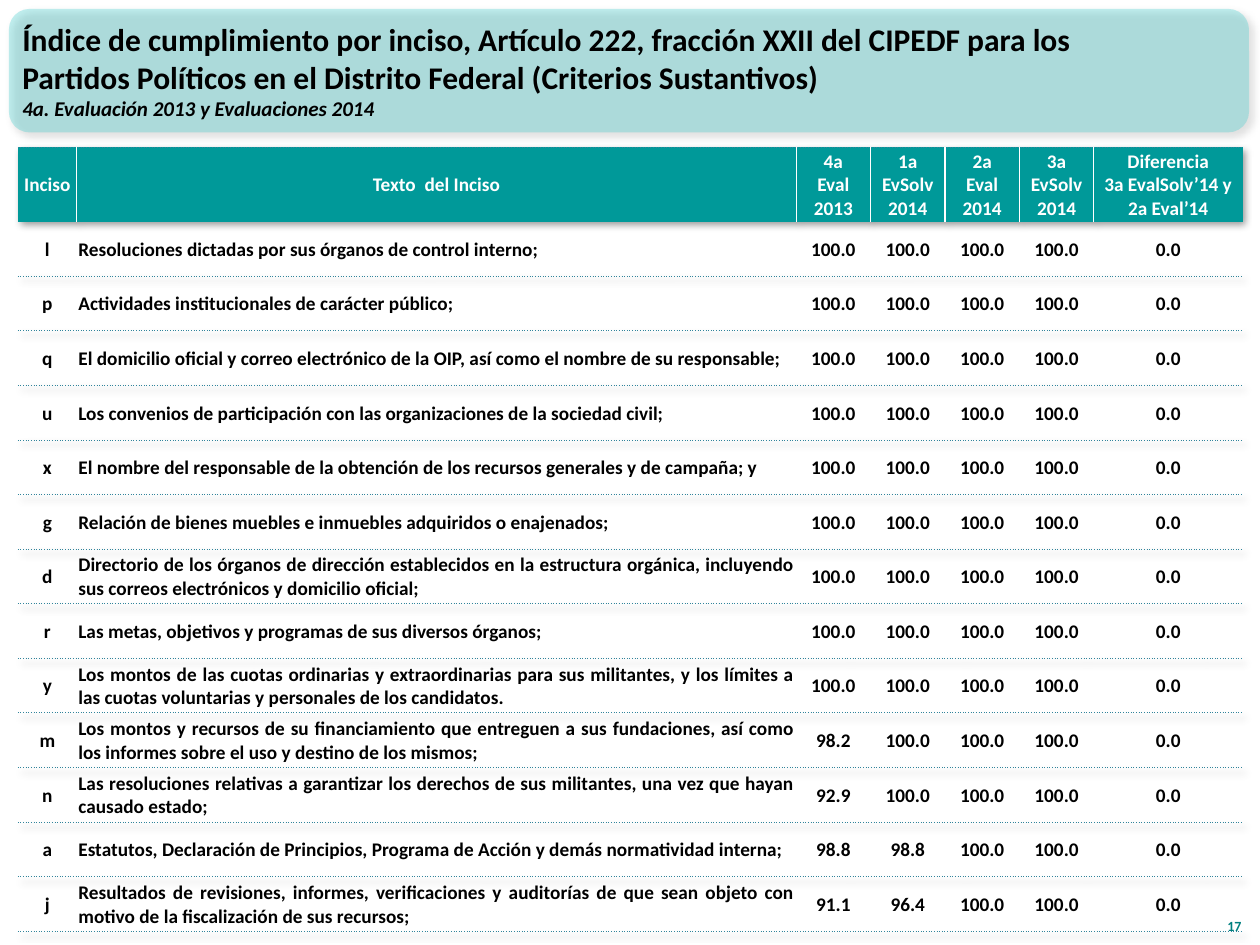
"""Build the compliance index slide for political parties in the Distrito Federal."""
from dataclasses import dataclass

from lxml import etree
from pptx import Presentation
from pptx.dml.color import RGBColor
from pptx.enum.shapes import MSO_SHAPE
from pptx.enum.text import MSO_ANCHOR, PP_ALIGN
from pptx.oxml.ns import qn
from pptx.util import Cm, Pt

ROUNDED = MSO_SHAPE.ROUNDED_RECTANGLE
MIDDLE, BOTTOM = MSO_ANCHOR.MIDDLE, MSO_ANCHOR.BOTTOM
LEFT, CENTER = PP_ALIGN.LEFT, PP_ALIGN.CENTER
RIGHT, JUSTIFY = PP_ALIGN.RIGHT, PP_ALIGN.JUSTIFY
PLAIN_STYLE = "{2D5ABB26-0587-4C30-8999-92F81FD0307C}"


@dataclass(frozen=True)
class Theme:
    font: str = "Calibri"
    ink: str = "000000"
    white: str = "FFFFFF"
    banner: str = "33CCCC"
    header: str = "009999"
    rule: str = "31849B"
    page: str = "008080"
    title_size: float = 18
    subtitle_size: float = 12
    table_size: float = 11
    page_size: float = 8


THEME = Theme()

TITLE = ("Índice de cumplimiento por inciso, Artículo 222, fracción XXII del CIPEDF para los "
         "Partidos Políticos en el Distrito Federal (Criterios Sustantivos)")
SUBTITLE = "4a. Evaluación 2013 y Evaluaciones 2014"

HEADINGS = [
    "Inciso",
    "Texto  del Inciso",
    "4a\nEval\n2013",
    "1a\nEvSolv\n2014",
    "2a\nEval\n2014",
    "3a\nEvSolv\n2014",
    "Diferencia\n3a EvalSolv’14 y\n2a Eval’14",
]
COLUMN_WIDTHS = [1.19, 14.5, 1.5, 1.5, 1.5, 1.5, 3]
HEADER_HEIGHT, ROW_HEIGHT = 1.5, 1.1

INCISOS = [
    ("l", "Resoluciones dictadas por sus órganos de control interno;", 100, 100, 100, 100),
    ("p", "Actividades institucionales de carácter público;", 100, 100, 100, 100),
    ("q", "El domicilio oficial y correo electrónico de la OIP, así como el nombre de su "
          "responsable;", 100, 100, 100, 100),
    ("u", "Los convenios de participación con las organizaciones de la sociedad civil;",
     100, 100, 100, 100),
    ("x", "El nombre del responsable de la obtención de los recursos generales y de campaña; y",
     100, 100, 100, 100),
    ("g", "Relación de bienes muebles e inmuebles adquiridos o enajenados;", 100, 100, 100, 100),
    ("d", "Directorio de los órganos de dirección establecidos en la estructura orgánica, "
          "incluyendo sus correos electrónicos y domicilio oficial;", 100, 100, 100, 100),
    ("r", "Las metas, objetivos y programas de sus diversos órganos;", 100, 100, 100, 100),
    ("y", "Los montos de las cuotas ordinarias y extraordinarias para sus militantes, y los "
          "límites a las cuotas voluntarias y personales de los candidatos.", 100, 100, 100, 100),
    ("m", "Los montos y recursos de su financiamiento que entreguen a sus fundaciones, así como "
          "los informes sobre el uso y destino de los mismos;", 98.2, 100, 100, 100),
    ("n", "Las resoluciones relativas a garantizar los derechos de sus militantes, una vez que "
          "hayan causado estado;", 92.9, 100, 100, 100),
    ("a", "Estatutos, Declaración de Principios, Programa de Acción y demás normatividad interna;",
     98.8, 98.8, 100, 100),
    ("j", "Resultados de revisiones, informes, verificaciones y auditorías de que sean objeto con "
          "motivo de la fiscalización de sus recursos;", 91.1, 96.4, 100, 100),
]


def add_child(parent, tag, **attributes):
    return etree.SubElement(parent, qn(tag), attributes)


def add_alpha_color(parent, color, percent):
    tint = add_child(parent, "a:srgbClr", val=color)
    add_child(tint, "a:alpha", val=str(percent * 1000))


def add_shadow(effects):
    shadow = add_child(effects, "a:outerShdw", blurRad=str(Pt(4)), dist=str(Pt(3)),
                       dir="2700000", algn="tl", rotWithShape="0")
    add_alpha_color(shadow, THEME.ink, 40)


def write(frame, lines, size, color, align, anchor=MIDDLE):
    frame.word_wrap = True
    frame.vertical_anchor = anchor
    frame.text = lines
    for paragraph in frame.paragraphs:
        paragraph.alignment = align
        font = paragraph.font
        font.name, font.size, font.bold = THEME.font, Pt(size), True
        font.color.rgb = RGBColor.from_string(color)


def add_banner(slide):
    banner = slide.shapes.add_shape(ROUNDED, Cm(0.18), Cm(0.18), Cm(25), Cm(2.49))
    banner.shadow.inherit = False
    banner.fill.solid()
    banner.fill.fore_color.rgb = RGBColor.from_string(THEME.banner)
    properties = banner.fill._xPr
    solid = properties.find(qn("a:solidFill"))
    solid.clear()
    add_alpha_color(solid, THEME.banner, 30)
    banner.line.fill.background()
    add_shadow(properties.find(qn("a:effectLst")))


def add_title(slide):
    title = slide.shapes.add_textbox(Cm(0.2), Cm(0.23), Cm(23.3), Cm(2.39)).text_frame
    write(title, f"{TITLE}\n{SUBTITLE}", THEME.title_size, THEME.ink, LEFT)
    subtitle = title.paragraphs[1].font
    subtitle.size, subtitle.italic = Pt(THEME.subtitle_size), True


def add_page_number(slide):
    number = slide.shapes.add_textbox(Cm(24.26), Cm(17.93), Cm(1.02), Cm(1.02)).text_frame
    write(number, "17", THEME.page_size, THEME.page, RIGHT, BOTTOM)


def set_borders(cell, **borders):
    properties = cell._tc.get_or_add_tcPr()
    for side in ("L", "R", "T", "B"):
        color, width, dash = borders.get(side, (None, 0, None))
        edge = add_child(properties, f"a:ln{side}", w=str(Pt(width)))
        if color is None:
            add_child(edge, "a:noFill")
        else:
            add_child(add_child(edge, "a:solidFill"), "a:srgbClr", val=color)
            add_child(edge, "a:prstDash", val=dash)


def fill_cell(cell, content, color, align):
    cell.margin_left = cell.margin_right = cell.margin_top = Cm(0.03)
    cell.margin_bottom = 0
    cell.vertical_anchor = MIDDLE
    write(cell.text_frame, content, THEME.table_size, color, align)


def add_heading(cell, heading, is_first, is_last):
    divider = (THEME.white, 0.75, "solid")
    borders = {"T": (THEME.rule, 0.5, "sysDot")}
    if not is_first:
        borders["L"] = divider
    if not is_last:
        borders["R"] = divider
    fill_cell(cell, heading, THEME.white, CENTER)
    set_borders(cell, **borders)
    cell.fill.solid()
    cell.fill.fore_color.rgb = RGBColor.from_string(THEME.header)


def add_inciso(cells, inciso, description, *scores):
    difference = scores[3] - scores[2]
    values = [f"{score:.1f}" for score in (*scores, difference)]
    for column, (cell, content) in enumerate(zip(cells, [inciso, description, *values])):
        fill_cell(cell, content, THEME.ink, JUSTIFY if column == 1 else CENTER)
        set_borders(cell, B=(THEME.rule, 0.5, "sysDot"))
        cell.fill.background()


def add_index_table(slide):
    height = HEADER_HEIGHT + ROW_HEIGHT * len(INCISOS)
    table = slide.shapes.add_table(len(INCISOS) + 1, len(HEADINGS), Cm(0.36), Cm(2.97),
                                   Cm(sum(COLUMN_WIDTHS)), Cm(height)).table
    table.first_row = table.horz_banding = False
    properties = table._tbl.tblPr
    properties.find(qn("a:tableStyleId")).text = PLAIN_STYLE
    effects = add_child(properties, "a:effectLst")
    properties.insert(0, effects)
    add_shadow(effects)
    for column, width in zip(table.columns, COLUMN_WIDTHS):
        column.width = Cm(width)
    header, *body = table.rows
    header.height = Cm(HEADER_HEIGHT)
    last = len(HEADINGS) - 1
    for index, heading in enumerate(HEADINGS):
        add_heading(header.cells[index], heading, index == 0, index == last)
    for row, record in zip(body, INCISOS):
        row.height = Cm(ROW_HEIGHT)
        add_inciso(row.cells, *record)


def main():
    deck = Presentation()
    deck.slide_width, deck.slide_height = Cm(25.4), Cm(19.05)
    slide = deck.slides.add_slide(deck.slide_layouts[6])
    add_banner(slide)
    add_page_number(slide)
    add_title(slide)
    add_index_table(slide)
    deck.save("out.pptx")


if __name__ == "__main__":
    main()
